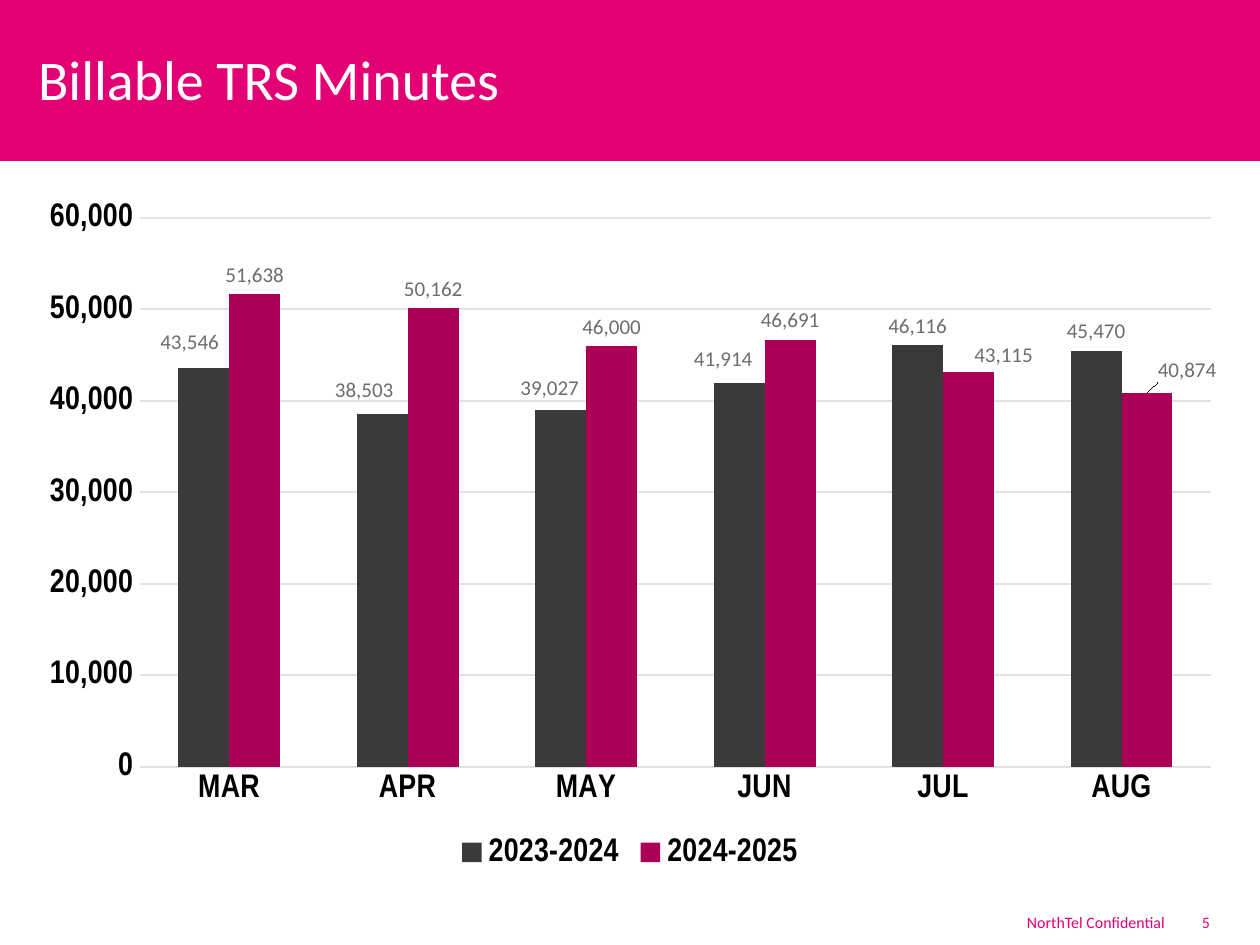
from lxml import etree
from pptx import Presentation, util as u
from pptx.chart.data import CategoryChartData
from pptx.dml.color import RGBColor
from pptx.enum import chart as ch, shapes, text
from pptx.oxml.ns import qn

PX = 914400 / 168
COLORS = {
    "brand": "E20074", "white": "FFFFFF", "axis": "000000", "grid": "E2E2E2",
    "label": "6D6D6D", "body": "3C3C3C", "previous": "3A3A3A", "current": "AA0057",
}
NUMBER = "#,##0;[Red]#,##0"
LEADER_NS = "http://schemas.microsoft.com/office/drawing/2012/chart"
LEADER_URI = "{CE6537A1-D6FC-4f65-9D91-7224C49458BB}"
MONTHS = ["MAR", "APR", "MAY", "JUN", "JUL", "AUG"]
SERIES = [
    ("2023-2024", "previous", [43546, 38503, 39027, 41914, 46116, 45470],
     {0: (-14, -7), 1: (-18, -5), 2: (-11, -2), 3: (-16, -5)}),
    ("2024-2025", "current", [51638, 50162, 46000, 46691, 43115, 40874],
     {4: (35, 2), 5: (40, -4)}),
]
AXIS_FONT = {"name": "Arial Narrow", "size": u.Pt(14), "bold": True}
LABEL_FONT = {"name": "Calibri", "size": u.Pt(9), "bold": False}


def emu(*lengths):
    return [round(length * PX) for length in lengths]


def rgb(name):
    return RGBColor.from_string(COLORS[name])


def style(item, values):
    for name, value in values.items():
        setattr(item, name, value)


def style_font(font, values, color):
    style(font, values)
    font.color.rgb = rgb(color)


def add_text(page, box, words, size, color, align=text.PP_ALIGN.LEFT, inset=(10, 5)):
    frame = page.shapes.add_textbox(*emu(*box)).text_frame
    side, end = emu(*inset)
    style(frame, {
        "word_wrap": True, "vertical_anchor": text.MSO_ANCHOR.MIDDLE,
        "margin_left": side, "margin_right": side,
        "margin_top": end, "margin_bottom": end,
    })
    para = frame.paragraphs[0]
    para.alignment = align
    span = para.add_run()
    span.text = words
    style_font(span.font, {"name": "Calibri", "size": u.Pt(size)}, color)


def add_header(page, box, title):
    left, top, width, height = box
    band = page.shapes.add_shape(shapes.MSO_SHAPE.RECTANGLE, *emu(*box))
    band.shadow.inherit = False
    band.fill.solid()
    band.fill.fore_color.rgb = rgb("brand")
    band.line.fill.background()
    add_text(page, (left + 25, top + 28, width - 44, 101), title, 24, "white",
             inset=(13, 7))


def add_footer(page, box, notice, number):
    left, top, width, height = box
    add_text(page, (left, top, 400, height), notice, 6.8, "brand", text.PP_ALIGN.RIGHT)
    add_text(page, (left + width - 64, top, 64, height), number, 6.8, "brand")


def add_layout(parent, index, values):
    layout = etree.Element(qn("c:layout"))
    manual = etree.SubElement(layout, qn("c:manualLayout"))
    for tag, value in values.items():
        etree.SubElement(manual, qn("c:" + tag)).set("val", str(value))
    parent.insert(index, layout)


def place_plot(chart, box, inner):
    area = chart._chartSpace.chart.plotArea
    for old in area.findall(qn("c:layout")):
        area.remove(old)
    left, top, width, height = inner
    add_layout(area, 0, {
        "layoutTarget": "inner", "xMode": "edge", "yMode": "edge",
        "x": round(left / box[2], 4), "y": round(top / box[3], 4),
        "w": round(width / box[2], 4), "h": round(height / box[3], 4),
    })


def style_axes(chart):
    for axis in (chart.category_axis, chart.value_axis):
        style(axis, {"major_tick_mark": ch.XL_TICK_MARK.NONE,
                     "minor_tick_mark": ch.XL_TICK_MARK.NONE})
        style_font(axis.tick_labels.font, AXIS_FONT, "axis")
        axis.format.line.fill.background()
    chart.category_axis.has_major_gridlines = False
    style(chart.value_axis, {"minimum_scale": 0, "maximum_scale": 60000,
                             "major_unit": 10000, "has_major_gridlines": True})
    style(chart.value_axis.tick_labels,
          {"number_format": NUMBER, "number_format_is_linked": False})
    line = chart.value_axis.major_gridlines.format.line
    line.width = u.Pt(0.75)
    line.color.rgb = rgb("grid")


def hide_leader_lines(labels):
    extras = etree.SubElement(labels._element, qn("c:extLst"))
    extra = etree.SubElement(extras, qn("c:ext"), uri=LEADER_URI)
    etree.SubElement(extra, f"{{{LEADER_NS}}}showLeaderLines",
                     nsmap={"c15": LEADER_NS}).set("val", "0")


def style_series(series, color, shifts, box):
    series.format.fill.solid()
    series.format.fill.fore_color.rgb = rgb(color)
    series.invert_if_negative = False
    labels = series.data_labels
    style(labels, {"show_value": True, "number_format": NUMBER,
                   "number_format_is_linked": False,
                   "position": ch.XL_LABEL_POSITION.OUTSIDE_END})
    style_font(labels.font, LABEL_FONT, "label")
    for index in shifts:
        label = series.points[index].data_label
        label.position = ch.XL_LABEL_POSITION.OUTSIDE_END
        style_font(label.font, LABEL_FONT, "label")
    for element in labels._element.findall(qn("c:dLbl")):
        across, down = shifts[int(element.find(qn("c:idx")).get("val"))]
        add_layout(element, 1, {"x": round(across / box[2], 4),
                                "y": round(down / box[3], 4)})
    hide_leader_lines(labels)


def add_minutes_chart(page, box):
    data = CategoryChartData(number_format=NUMBER)
    data.categories = MONTHS
    for name, color, values, shifts in SERIES:
        data.add_series(name, values)
    chart = page.shapes.add_chart(
        ch.XL_CHART_TYPE.COLUMN_CLUSTERED, *emu(*box), data).chart
    style(chart, {"has_title": False, "has_legend": True})
    style_font(chart.font, {"name": "Calibri", "size": u.Pt(10)}, "body")
    style(chart.legend, {"position": ch.XL_LEGEND_POSITION.BOTTOM,
                         "include_in_layout": False})
    style_font(chart.legend.font, AXIS_FONT, "axis")
    style(chart.plots[0], {"gap_width": 150, "overlap": 0, "vary_by_categories": False})
    style_axes(chart)
    for series, (name, color, values, shifts) in zip(chart.plots[0].series, SERIES):
        style_series(series, color, shifts, box)
    place_plot(chart, box, (115, 30, 1071, 549))


def main():
    deck = Presentation()
    deck.slide_width, deck.slide_height = emu(1260, 945)
    page = deck.slides.add_slide(deck.slide_layouts[6])
    add_header(page, (0, 0, 1260, 161), "Billable TRS Minutes")
    add_minutes_chart(page, (25, 188, 1210, 687))
    add_footer(page, (775, 908, 481, 29), "NorthTel Confidential", "5")
    deck.save("out.pptx")


if __name__ == "__main__":
    main()
